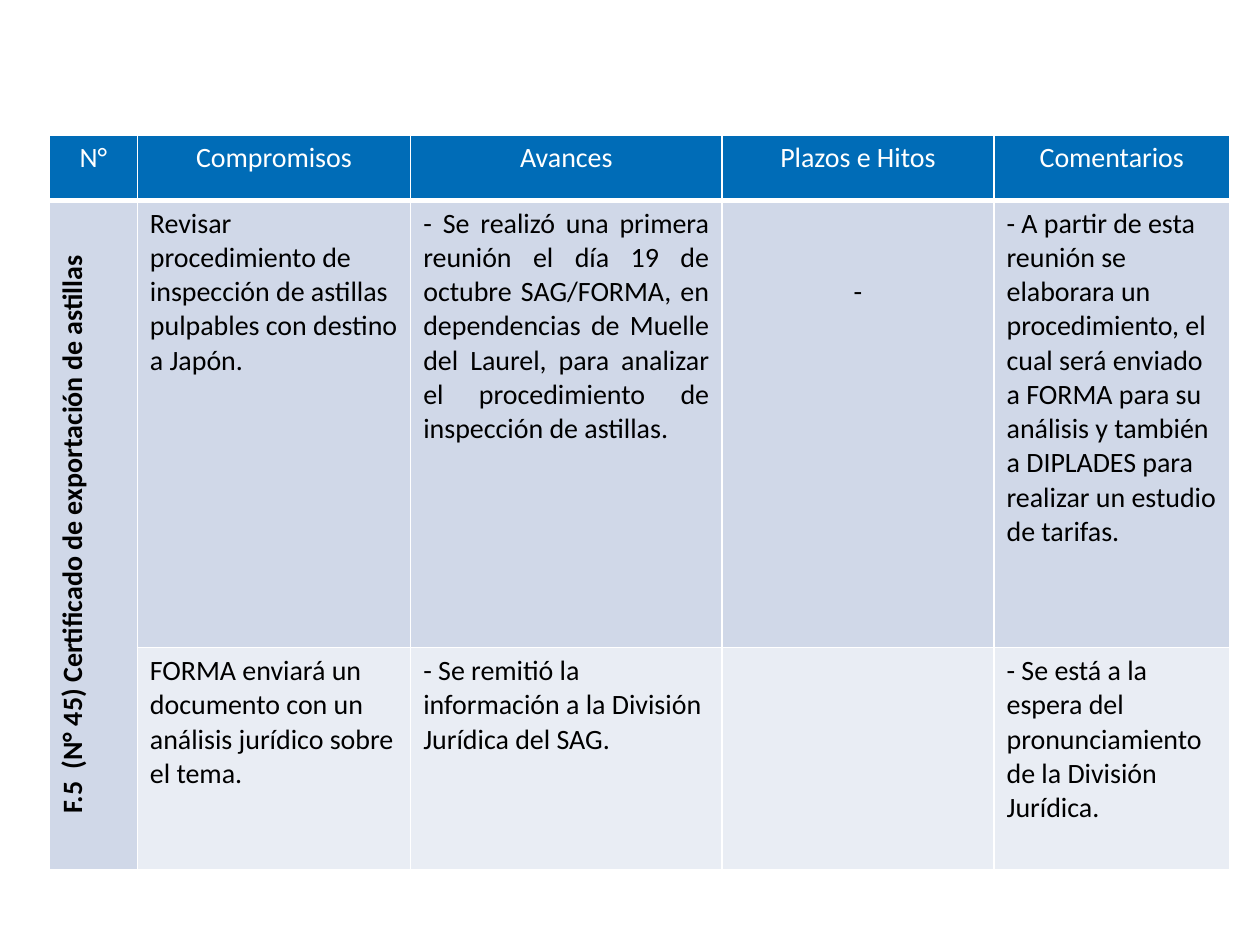
from lxml.etree import SubElement
from pptx import Presentation
from pptx.dml.color import RGBColor
from pptx.enum.text import PP_ALIGN
from pptx.oxml.ns import qn
from pptx.util import Inches, Pt

WHITE = RGBColor(0xFF, 0xFF, 0xFF)
BLACK = RGBColor(0x00, 0x00, 0x00)
BLUE = RGBColor(0x00, 0x6C, 0xB7)
MIST = RGBColor(0xD0, 0xD8, 0xE8)
PALE = RGBColor(0xE9, 0xED, 0xF4)

LEFT, MID, JUST = PP_ALIGN.LEFT, PP_ALIGN.CENTER, PP_ALIGN.JUSTIFY

COLS = [7, 21.7, 24.7, 21.6, 18.7]
ROWS = [6.93, 47.33, 23.47]
HEADS = ["N°", "Compromisos", "Avances", "Plazos e Hitos", "Comentarios"]
TOPIC = "F.5  (N° 45) Certificado de exportación de astillas"
BODY = [
    [
        ("Revisar procedimiento de inspección de astillas pulpables "
         "con destino a Japón.", LEFT),
        ("- Se realizó una primera reunión el día 19 de octubre SAG/FORMA, "
         "en dependencias de Muelle del Laurel, para analizar el "
         "procedimiento de inspección de astillas.", JUST),
        ("-", MID),
        ("- A partir de esta reunión se elaborara un procedimiento, el cual "
         "será enviado a FORMA para su análisis y también a DIPLADES para "
         "realizar un estudio de tarifas.", LEFT),
    ],
    [
        ("FORMA enviará un documento con un análisis jurídico sobre "
         "el tema.", LEFT),
        ("- Se remitió la información a la División Jurídica del SAG.", LEFT),
        ("", LEFT),
        ("- Se está a la espera del pronunciamiento de la División "
         "Jurídica.", LEFT),
    ],
]


class Deck:
    font = "Calibri"
    size = Pt(16)

    def __init__(self, wide, high):
        self.show = Presentation()
        self.show.slide_width = Inches(wide)
        self.show.slide_height = Inches(high)
        self.slide = self.show.slides.add_slide(self.show.slide_layouts[6])

    def across(self, share):
        return round(self.show.slide_width * share / 100)

    def down(self, share):
        return round(self.show.slide_height * share / 100)

    def table(self, left, top, cols, rows):
        frame = self.slide.shapes.add_table(
            len(rows), len(cols), self.across(left), self.down(top),
            self.across(sum(cols)), self.down(sum(rows)))
        grid = frame.table
        for col, share in zip(grid.columns, cols):
            col.width = self.across(share)
        for row, share in zip(grid.rows, rows):
            row.height = self.down(share)
        return grid

    def edge(self, cell, base):
        props = cell._tc.get_or_add_tcPr()
        for side, width in zip("LRTB", (1, 1, 1, base)):
            line = SubElement(props, qn(f"a:ln{side}"), w=str(Pt(width)))
            fill = SubElement(line, qn("a:solidFill"))
            SubElement(fill, qn("a:srgbClr"), val=str(WHITE))

    def cell(self, cell, text, fill, align=LEFT, ink=BLACK, bold=False, base=1):
        self.edge(cell, base)
        cell.fill.solid()
        cell.fill.fore_color.rgb = fill
        para = cell.text_frame.paragraphs[0]
        para.alignment = align
        para.font.size = self.size
        if text:
            run = para.add_run()
            run.text = text
            run.font.name = self.font
            run.font.size = self.size
            run.font.bold = bold
            run.font.color.rgb = ink

    def turn(self, cell):
        cell._tc.get_or_add_tcPr().set("vert", "vert270")


def main():
    deck = Deck(10, 7.5)
    grid = deck.table(3.9, 14.27, COLS, ROWS)
    for col, head in enumerate(HEADS):
        deck.cell(grid.cell(0, col), head, BLUE, MID, WHITE, base=3)

    topic = grid.cell(1, 0)
    topic.merge(grid.cell(2, 0))
    deck.cell(topic, TOPIC, MIST, MID, bold=True)
    deck.turn(topic)

    for row, (items, fill) in enumerate(zip(BODY, (MIST, PALE)), 1):
        for col, (text, align) in enumerate(items, 1):
            deck.cell(grid.cell(row, col), text, fill, align)
    grid.cell(1, 3).margin_top = deck.down(7.9)

    deck.show.save("out.pptx")


if __name__ == "__main__":
    main()
